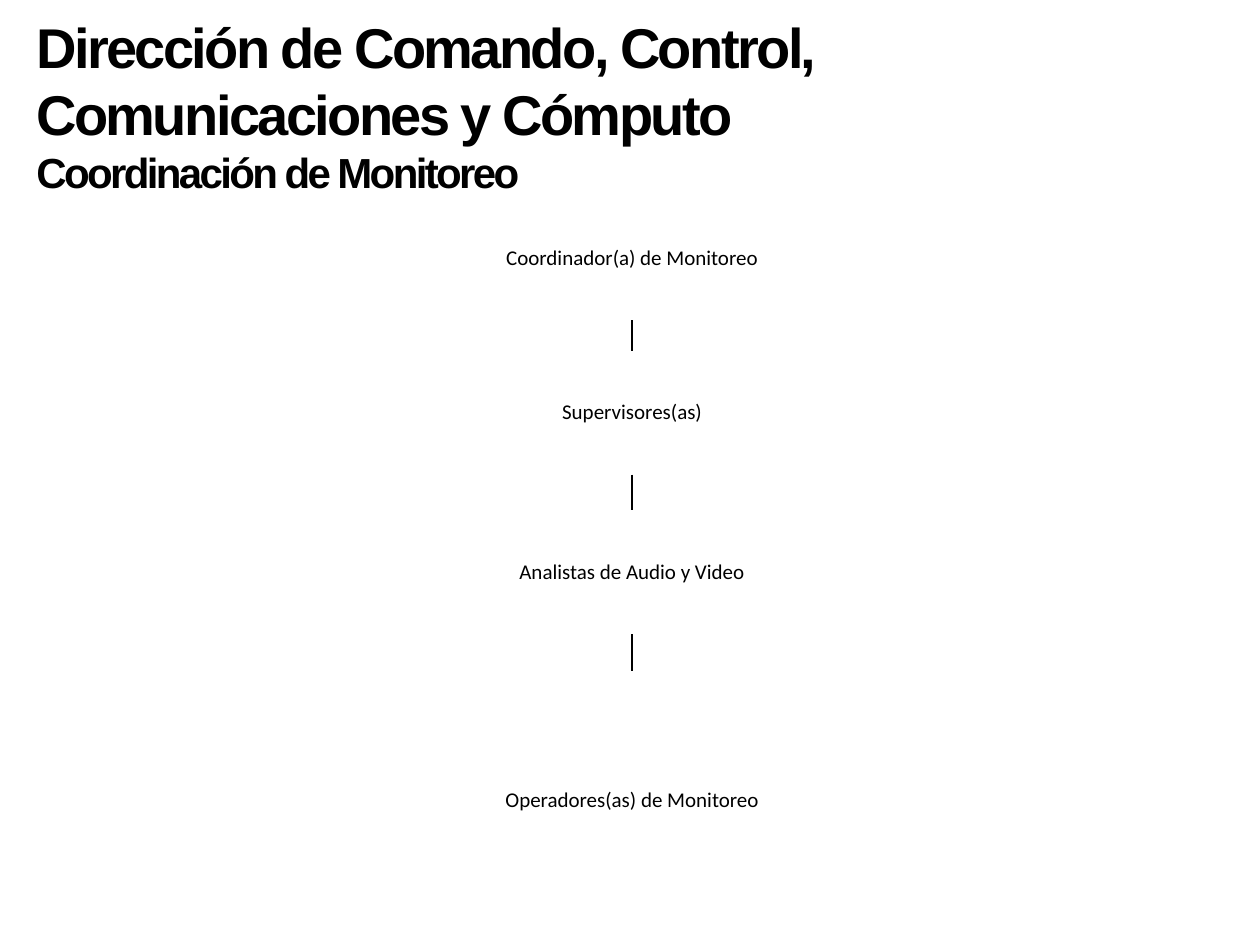
"""Builds the organisation chart slide of the monitoring coordination."""
import dataclasses
import itertools

import pptx
import pptx.dml.color
import pptx.enum.shapes
import pptx.enum.text
import pptx.oxml.ns
import pptx.util
from lxml import etree

Pt = pptx.util.Pt


@dataclasses.dataclass(frozen=True)
class Theme:
    ink: str = "000000"
    paper: str = "FFFFFF"
    heading_font: str = "Arial"
    role_font: str = "Calibri"
    title_size: float = 32
    subtitle_size: float = 24
    role_size: float = 12
    heading_tracking: float = -1.5
    line_width: float = 1
    role_inset: float = 0.7


class OrgSlide:
    def __init__(self, theme, slide):
        self.theme = theme
        self.slide = slide

    def color(self, value):
        return pptx.dml.color.RGBColor.from_string(value)

    def add_run(self, paragraph, words, font, size, bold=False, tracking=0):
        run = paragraph.add_run()
        run.text = words
        run.font.name = font
        run.font.size = Pt(size)
        run.font.bold = bold
        run.font.color.rgb = self.color(self.theme.ink)
        if tracking:
            run.font._element.set("spc", str(round(tracking * 100)))

    def heading(self, left, top, width, height, lines):
        heading = self.slide.shapes.add_textbox(Pt(left), Pt(top), Pt(width), Pt(height))
        frame = heading.text_frame
        frame.word_wrap = True
        frame.auto_size = pptx.enum.text.MSO_AUTO_SIZE.SHAPE_TO_FIT_TEXT
        for index, (words, size) in enumerate(lines):
            paragraph = frame.add_paragraph() if index else frame.paragraphs[0]
            self.add_run(paragraph, words, self.theme.heading_font, size,
                         True, self.theme.heading_tracking)

    def role(self, center, top, width, height, title, filled=True):
        role = self.slide.shapes.add_shape(
            pptx.enum.shapes.MSO_SHAPE.RECTANGLE,
            Pt(center - width / 2), Pt(top), Pt(width), Pt(height))
        role.shadow.inherit = False
        role.line.fill.background()
        if filled:
            role.fill.solid()
            role.fill.fore_color.rgb = self.color(self.theme.paper)
        else:
            role.fill.background()
        frame = role.text_frame
        frame.word_wrap = True
        frame.vertical_anchor = pptx.enum.text.MSO_ANCHOR.MIDDLE
        frame.margin_left = frame.margin_right = Pt(self.theme.role_inset)
        frame.margin_top = frame.margin_bottom = Pt(self.theme.role_inset)
        paragraph = frame.paragraphs[0]
        paragraph.alignment = pptx.enum.text.PP_ALIGN.CENTER
        paragraph.line_spacing = 0.9
        paragraph.space_after = Pt(0.35 * self.theme.role_size)
        self.add_run(paragraph, title, self.theme.role_font, self.theme.role_size)
        return role

    def link(self, superior, subordinate):
        link = self.slide.shapes.add_connector(
            pptx.enum.shapes.MSO_CONNECTOR.STRAIGHT, Pt(0), Pt(0), Pt(0), Pt(0))
        link.begin_connect(superior, 2)
        link.end_connect(subordinate, 0)
        link.line.color.rgb = self.color(self.theme.ink)
        link.line.width = Pt(self.theme.line_width)
        etree.SubElement(link._element.spPr, pptx.oxml.ns.qn("a:effectLst"))


def main():
    presentation = pptx.Presentation()
    presentation.slide_width, presentation.slide_height = Pt(720), Pt(540)
    theme = Theme()
    chart = OrgSlide(theme, presentation.slides.add_slide(presentation.slide_layouts[6]))

    chart.heading(13.7, 3.6, 537, 113.8, [
        ("Dirección de Comando, Control, Comunicaciones y Cómputo", theme.title_size),
        ("Coordinación de Monitoreo", theme.subtitle_size),
    ])

    center, role_height = 361.2, 70.6
    hierarchy = [
        chart.role(center, 112.4, 201, role_height, "Coordinador(a) de Monitoreo", filled=False),
        chart.role(center, 200.6, 201, role_height, "Supervisores(as)"),
        chart.role(center, 291.7, 241, role_height, "Analistas de Audio y Video"),
        chart.role(center, 383.2, 320, 148.3, "Operadores(as) de Monitoreo"),
    ]
    for superior, subordinate in itertools.pairwise(hierarchy):
        chart.link(superior, subordinate)

    presentation.save("out.pptx")


if __name__ == "__main__":
    main()
